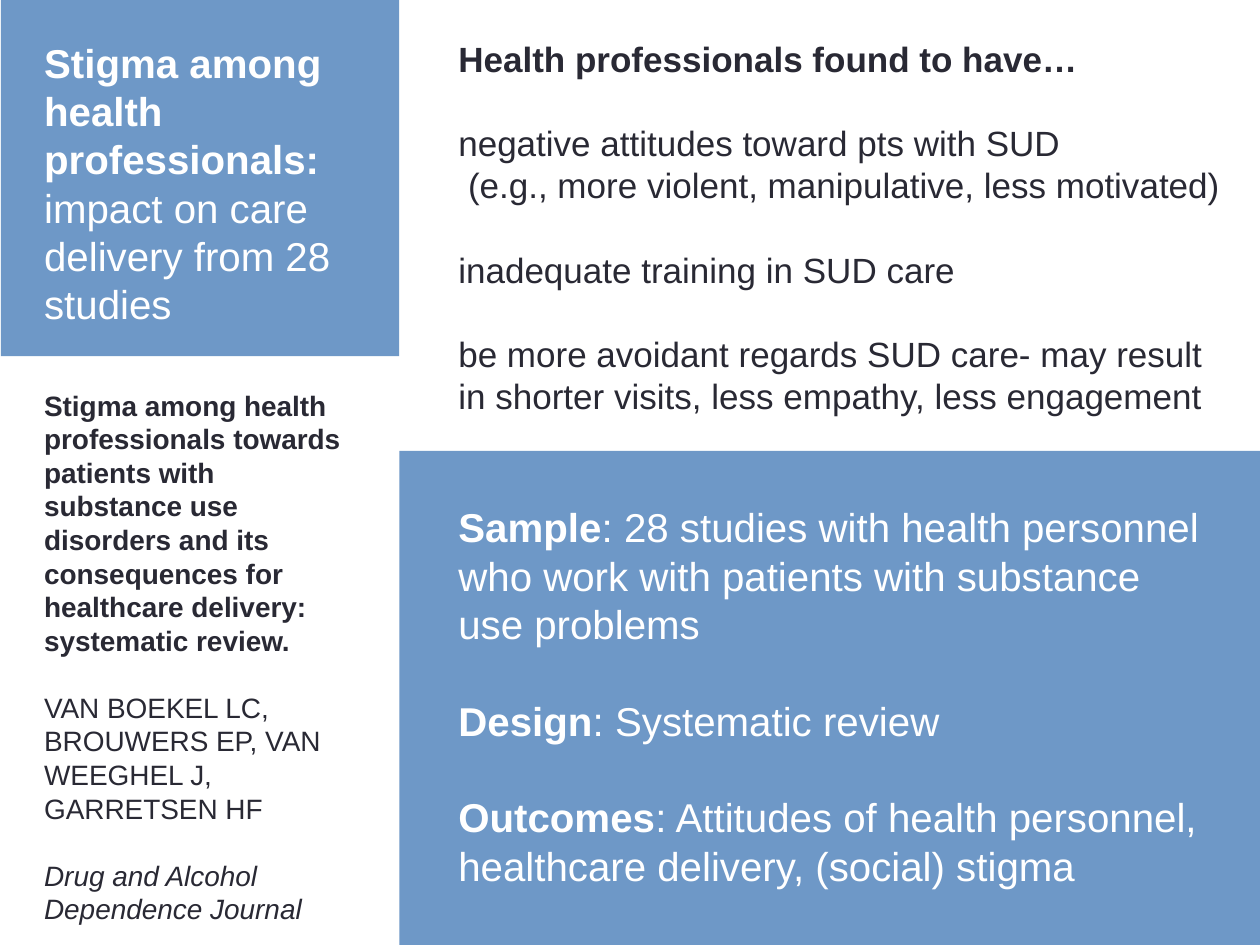
from pptx import Presentation
from pptx.dml.color import RGBColor
from pptx.enum.shapes import MSO_SHAPE as SHAPE
from pptx.util import Cm, Pt

BLUE, WHITE, DARK = "6E98C7", "FFFFFF", "292934"
LINE = 1.2  # line height as a multiple of the font size


def rgb(value):
    return RGBColor.from_string(value)


def add_text(box, paragraphs, size, color):
    """Each paragraph is (blank lines before, [(text, style)]); style holds "b" or "i"."""
    tf = s.shapes.add_textbox(*map(Cm, box)).text_frame
    tf.word_wrap = True
    for i, (gap, runs) in enumerate(paragraphs):
        p = tf.paragraphs[0] if i == 0 else tf.add_paragraph()
        p.line_spacing = Pt(size * LINE)
        p.space_before = Pt(size * LINE * gap)
        for text, style in runs:
            r = p.add_run()
            r.text = text
            r.font.name, r.font.size = "Arial", Pt(size)
            r.font.bold, r.font.italic = "b" in style, "i" in style
            r.font.color.rgb = rgb(color)


prs = Presentation()
prs.slide_width, prs.slide_height = Cm(25.4), Cm(19.05)
s = prs.slides.add_slide(prs.slide_layouts[6])

# Blue panels behind the title and the study details
for box in [(0.02, -0.02, 8.03, 7.2), (8.05, 9.09, 17.35, 9.96)]:
    sp = s.shapes.add_shape(SHAPE.RECTANGLE, *map(Cm, box))
    sp.shadow.inherit = False
    sp.fill.solid()
    sp.fill.fore_color.rgb = rgb(BLUE)
    sp.line.fill.background()

# Title
add_text((0.64, 0.64, 6.55, 6.15), [
    (0, [("Stigma among health professionals: ", "b"),
         ("impact on care delivery from 28 studies", "")]),
], size=23, color=WHITE)

# Study details
details = [
    ("Sample", "28 studies with health personnel who work with patients "
               "with substance use problems"),
    ("Design", "Systematic review"),
    ("Outcomes", "Attitudes of health personnel, healthcare delivery, (social) stigma"),
]
add_text((8.99, 10.01, 15.47, 8.13), [
    (int(i > 0), [(label, "b"), (": " + text, "")])
    for i, (label, text) in enumerate(details)
], size=23, color=WHITE)

# Citation
add_text((0.64, 7.7, 6.55, 11.35), [
    (0, [("Stigma among health professionals towards patients with substance use "
          "disorders and its consequences for healthcare delivery: "
          "systematic review.", "b")]),
    (1, [("VAN BOEKEL LC, BROUWERS EP, VAN WEEGHEL J, GARRETSEN HF", "")]),
    (1, [("Drug and Alcohol Dependence Journal", "i")]),
], size=16, color=DARK)

# Findings
add_text((8.99, 0.64, 15.9, 7.95), [
    (0, [("Health professionals found to have…", "b")]),
    (1, [("negative attitudes toward pts with SUD", "")]),
    (0, [(" (e.g., more violent, manipulative, less motivated)", "")]),
    (1, [("inadequate training in SUD care", "")]),
    (1, [("be more avoidant regards SUD care- may result in shorter visits, "
          "less empathy, less engagement", "")]),
], size=20, color=DARK)

prs.save("out.pptx")
